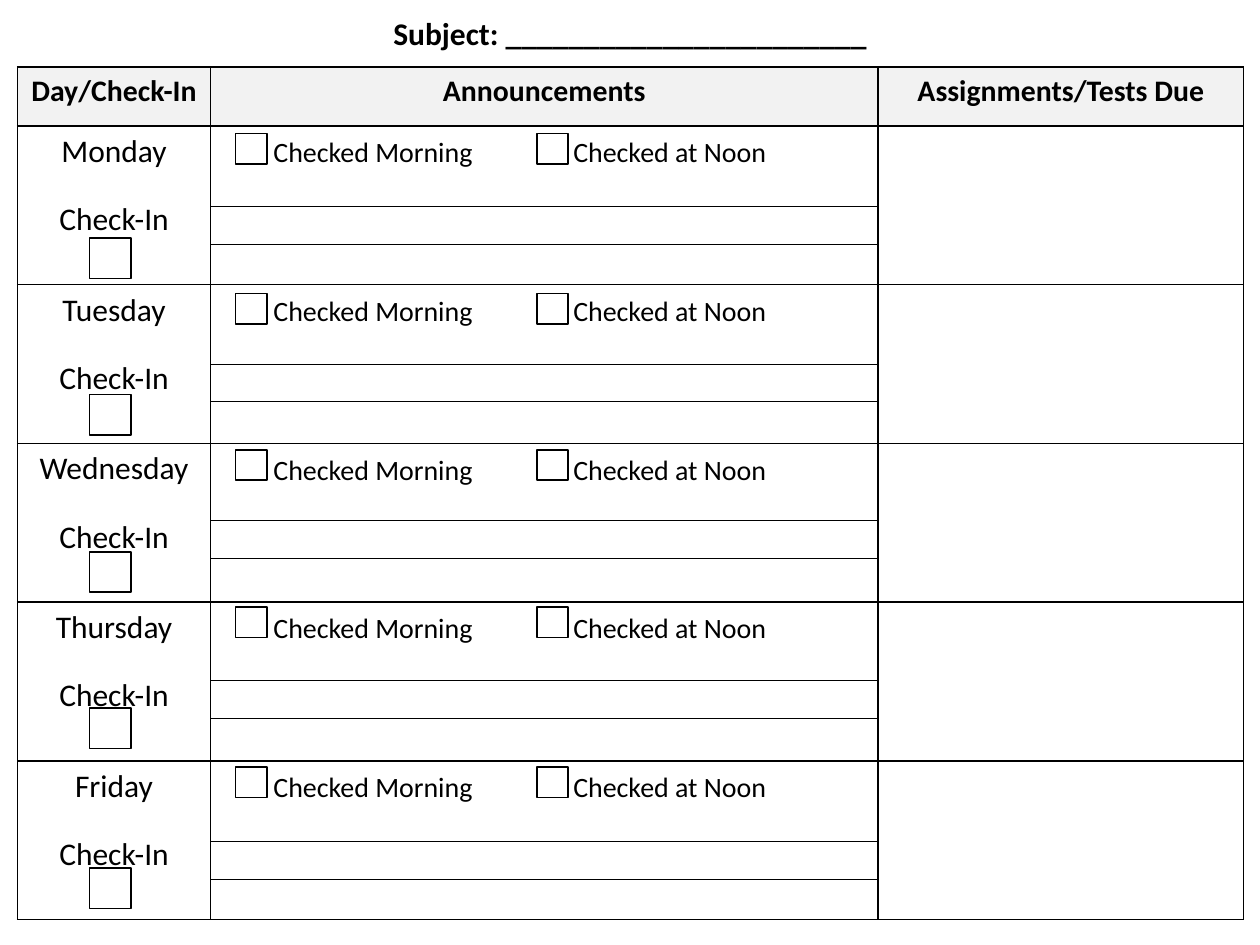
from dataclasses import dataclass

from lxml import etree
from pptx import Presentation
from pptx import util as u
from pptx.dml import color
from pptx.enum import shapes, text
from pptx.oxml import ns


@dataclass(frozen=True)
class Theme:
    font: str = "Calibri"
    ink: color.RGBColor = color.RGBColor(0, 0, 0)
    paper: color.RGBColor = color.RGBColor(255, 255, 255)
    header: color.RGBColor = color.RGBColor(0xF2, 0xF2, 0xF2)
    title_size: int = 18
    header_size: int = 17
    day_size: int = 18
    check_size: int = 16
    border: float = 1
    rule: float = 0.5


THEME = Theme()
LEFT = 0.14
COLUMNS = (1.53, 5.3, 2.9)
HEADER_TOP, HEADER_HEIGHT = 0.53, 0.47
DAYS_TOP, DAY_HEIGHT = 1, 1.26
HEADINGS = ("Day/Check-In", "Announcements", "Assignments/Tests Due")
# Day, then the tops of its check-in box, its checked boxes and its first rule
DAYS = (
    ("Monday", 1.89, 1.06, 1.64),
    ("Tuesday", 3.13, 2.33, 2.89),
    ("Wednesday", 4.38, 3.57, 4.13),
    ("Thursday", 5.62, 4.82, 5.4),
    ("Friday", 6.89, 6.09, 6.68),
)


def format_paragraph(para, size, bold=False, align=text.PP_ALIGN.CENTER):
    para.alignment = align
    para.font.name = THEME.font
    para.font.size = u.Pt(size)
    para.font.bold = bold
    para.font.color.rgb = THEME.ink


def add_tab_stops(para, *positions):
    stops = etree.SubElement(para._p.get_or_add_pPr(), ns.qn("a:tabLst"))
    for position in positions:
        etree.SubElement(stops, ns.qn("a:tab"), pos=str(u.Inches(position)), algn="l")


def add_borders(cell):
    properties = cell._tc.get_or_add_tcPr()
    for index, side in enumerate(("a:lnL", "a:lnR", "a:lnT", "a:lnB")):
        line = etree.Element(ns.qn(side), w=str(u.Pt(THEME.border)))
        fill = etree.SubElement(line, ns.qn("a:solidFill"))
        etree.SubElement(fill, ns.qn("a:srgbClr"), val=str(THEME.ink))
        properties.insert(index, line)


def add_grid(slide, top, row_count, row_height, fill=None):
    frame = slide.shapes.add_table(
        row_count, len(COLUMNS), u.Inches(LEFT), u.Inches(top),
        u.Inches(sum(COLUMNS)), u.Inches(row_height * row_count))
    table = frame.table
    table.first_row = table.horz_banding = False
    for column, width in zip(table.columns, COLUMNS):
        column.width = u.Inches(width)
    for row in table.rows:
        row.height = u.Inches(row_height)
    for cell in table.iter_cells():
        if fill is None:
            cell.fill.background()
        else:
            cell.fill.solid()
            cell.fill.fore_color.rgb = fill
        add_borders(cell)
    return table


def add_title(slide, words):
    title = slide.shapes.title
    title.left, title.top = u.Inches(0), u.Inches(0.06)
    title.width, title.height = u.Inches(10), u.Inches(0.4)
    frame = title.text_frame
    frame.text = words
    frame.word_wrap = True
    frame.auto_size = text.MSO_AUTO_SIZE.SHAPE_TO_FIT_TEXT
    frame.vertical_anchor = text.MSO_ANCHOR.TOP
    format_paragraph(frame.paragraphs[0], THEME.title_size, bold=True)


def fill_day(day_cell, announcements_cell, day):
    frame = day_cell.text_frame
    frame.text = f"{day}\nCheck-In"
    for para in frame.paragraphs:
        format_paragraph(para, THEME.day_size)
    frame.paragraphs[1].space_before = u.Pt(17)

    announcements_cell.margin_top = u.Inches(0.08)
    para = announcements_cell.text_frame.paragraphs[0]
    para.text = "\tChecked Morning\tChecked at Noon"
    add_tab_stops(para, 0.4, 2.78)
    format_paragraph(para, THEME.check_size, align=text.PP_ALIGN.LEFT)


def add_checkbox(slide, left, top, width, height):
    box = slide.shapes.add_shape(
        shapes.MSO_SHAPE.RECTANGLE, u.Inches(left), u.Inches(top),
        u.Inches(width), u.Inches(height))
    box.shadow.inherit = False
    box.fill.solid()
    box.fill.fore_color.rgb = THEME.paper
    box.line.color.rgb = THEME.ink
    box.line.width = u.Pt(THEME.border)


def add_rule(slide, top):
    left = LEFT + COLUMNS[0]
    rule = slide.shapes.add_connector(
        shapes.MSO_CONNECTOR.STRAIGHT, u.Inches(left), u.Inches(top),
        u.Inches(left + COLUMNS[1]), u.Inches(top))
    rule.line.color.rgb = THEME.ink
    rule.line.width = u.Pt(THEME.rule)
    etree.SubElement(rule._element.spPr, ns.qn("a:effectLst"))


def main():
    deck = Presentation()
    deck.slide_width, deck.slide_height = u.Inches(10), u.Inches(7.5)
    slide = deck.slides.add_slide(deck.slide_layouts[5])
    add_title(slide, "Subject: " + "_" * 23)

    days = add_grid(slide, DAYS_TOP, len(DAYS), DAY_HEIGHT)
    header = add_grid(slide, HEADER_TOP, 1, HEADER_HEIGHT, THEME.header)
    for cell, heading in zip(header.iter_cells(), HEADINGS):
        cell.text = heading
        format_paragraph(cell.text_frame.paragraphs[0], THEME.header_size, bold=True)

    for row, (day, check_in_top, checked_top, rule_top) in enumerate(DAYS):
        fill_day(days.cell(row, 0), days.cell(row, 1), day)
        add_checkbox(slide, 0.71, check_in_top, 0.33, 0.32)
        for left in (1.87, 4.26):
            add_checkbox(slide, left, checked_top, 0.25, 0.24)
        for gap in (0, 0.3):
            add_rule(slide, rule_top + gap)

    deck.save("out.pptx")


if __name__ == "__main__":
    main()
